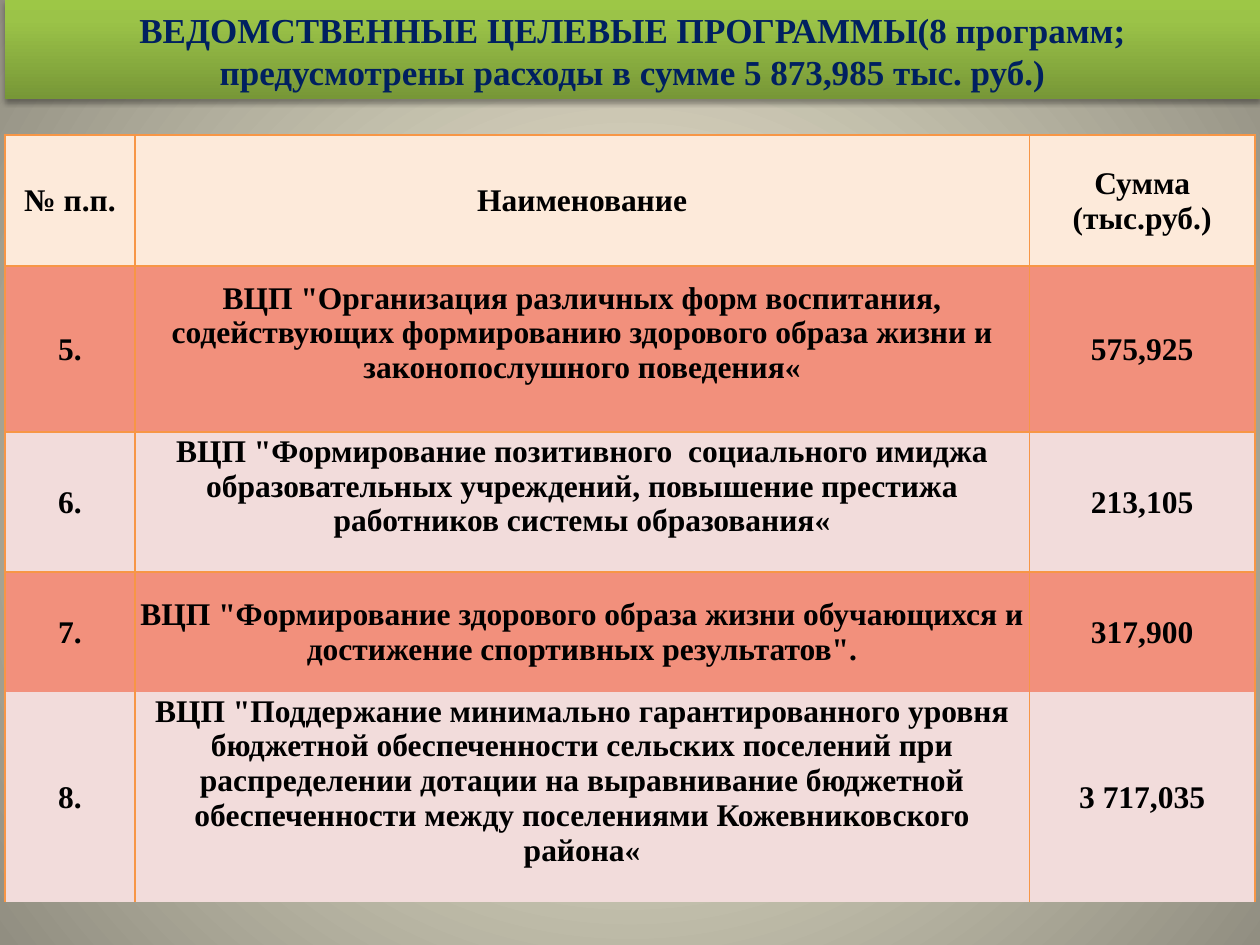
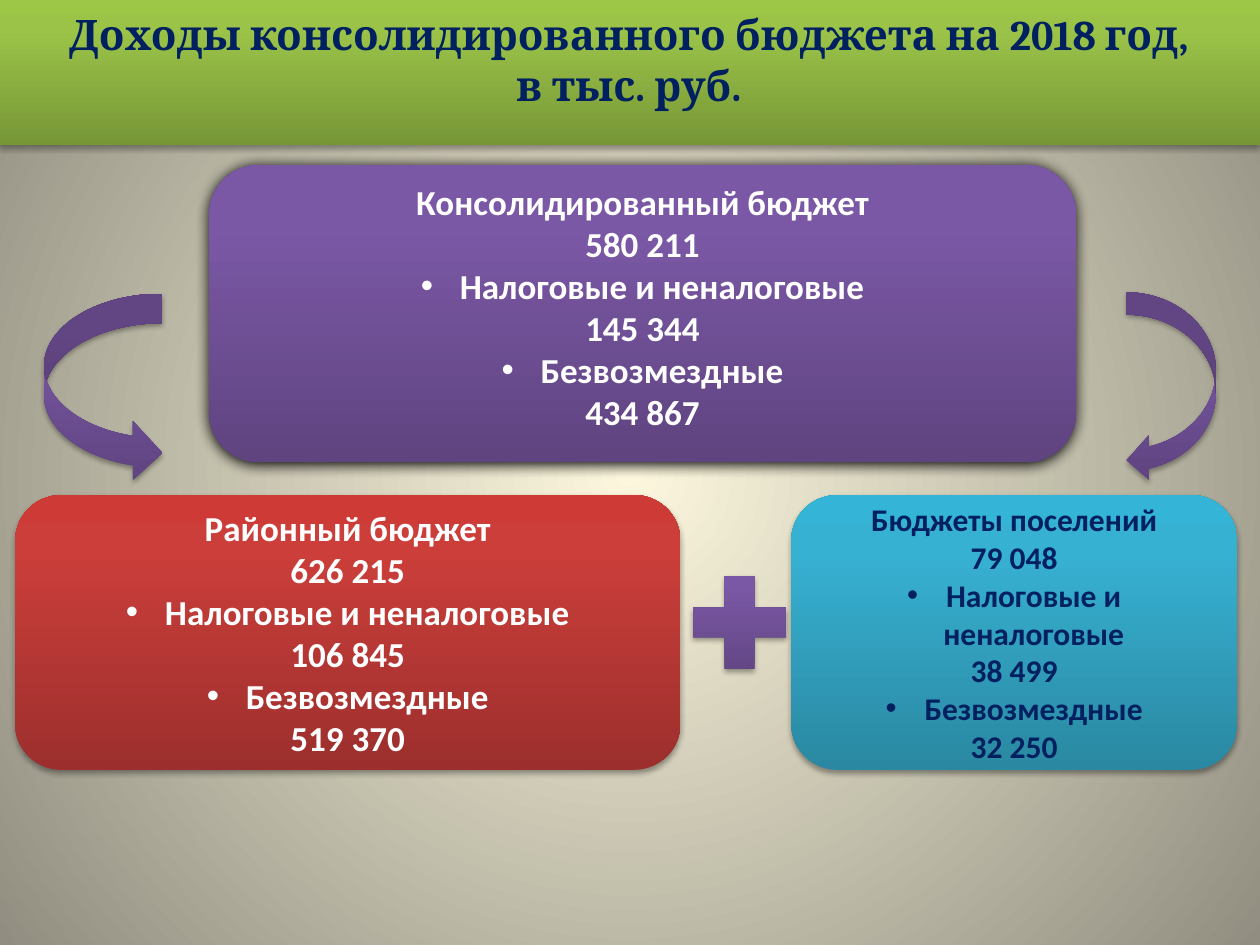
import pptx
import pptx.util
import pptx.oxml
import pptx.oxml.ns
from pptx.dml.color import RGBColor
from pptx.enum.shapes import MSO_SHAPE
from pptx.enum.text import MSO_ANCHOR, PP_ALIGN

Pt = pptx.util.Pt
Inches = pptx.util.Inches
qn = pptx.oxml.ns.qn

WIDE, HIGH = Inches(10), Inches(7.5)

# Shared colours
NAVY = RGBColor(0x00, 0x20, 0x60)
WHITE = RGBColor(0xFF, 0xFF, 0xFF)
BLACK = RGBColor(0x00, 0x00, 0x00)
ORANGE = RGBColor(0xF7, 0x96, 0x46)
CREAM = RGBColor(0xFD, 0xEA, 0xDA)
CORAL = RGBColor(0xF2, 0x90, 0x7C)
ROSE = RGBColor(0xF2, 0xDC, 0xDB)


def ramp(*tones):
    """Pair three colours with the gradient stops used by all shapes."""
    return list(zip((0, 80, 100), map(RGBColor.from_string, tones)))


GREEN = ramp("779737", "9BC348", "9DC746")
PURPLE = ramp("5F4480", "7B58A6", "7C57A8")
RED = ramp("9C2F2D", "CB3E3A", "CE3B37")
CYAN = ramp("2A88A2", "37B1D2", "34B4D6")
GLOW = [(0, RGBColor(0xFC, 0xF7, 0xDD)), (100, RGBColor(0x91, 0x8E, 0x81))]

UPWARD = '<a:lin ang="16200000" scaled="0"/>'
ROUND = ('<a:path path="circle"><a:fillToRect l="50000" t="50000" '
         'r="50000" b="50000"/></a:path>')

# Shadows: opacity in percent, blur and distance in points
SOFT = (35, 3.1, 1.8)
DEEP = (100, 8.5, 1)

# Programme table
COLS = (1.03, 7.1, 1.79)
ROWS = (1.04, 1.32, 1.11, 0.95, 1.67)
HEAD = ("№ п.п.", "Наименование", "Сумма (тыс.руб.)")
PLANS = (
    ("5.", 'ВЦП "Организация различных форм воспитания, содействующих '
     'формированию здорового образа жизни и законопослушного поведения«',
     "575,925"),
    ("6.", 'ВЦП "Формирование позитивного  социального имиджа образовательных '
     'учреждений, повышение престижа работников системы образования«',
     "213,105"),
    ("7.", 'ВЦП "Формирование здорового образа жизни обучающихся и '
     'достижение спортивных результатов".', "317,900"),
    ("8.", 'ВЦП "Поддержание минимально гарантированного уровня бюджетной '
     'обеспеченности сельских поселений при распределении дотации на '
     'выравнивание бюджетной обеспеченности между поселениями '
     'Кожевниковского района«', "3 717,035"),
)


def node(text):
    """Make an element of the drawing namespace from its markup."""
    space = pptx.oxml.ns.nsdecls("a")
    end = min(i for i in (text.find(" "), text.find("/>"), text.find(">"))
              if i > 0)
    return pptx.oxml.parse_xml(f"{text[:end]} {space}{text[end:]}")


def place(x, y, w, h):
    """Turn percentages of the slide into left, top, width, height."""
    return [int(side * part / 100)
            for side, part in zip((WIDE, HIGH, WIDE, HIGH), (x, y, w, h))]


def blend(fill, owner, stops, course):
    """Give a fill a gradient that follows the given course."""
    fill.gradient()
    old = owner.find(".//" + qn("a:gradFill"))
    marks = "".join(f'<a:gs pos="{pos * 1000}"><a:srgbClr val="{tone}"/></a:gs>'
                    for pos, tone in stops)
    new = node(f'<a:gradFill rotWithShape="1"><a:gsLst>{marks}</a:gsLst>'
               f'{course}</a:gradFill>')
    old.getparent().replace(old, new)


def shade(shape, alpha, blur, gap):
    """Cast a shadow straight down."""
    shape.shadow.inherit = False
    glow = shape.element.spPr.find(qn("a:effectLst"))
    glow.append(node(
        f'<a:outerShdw blurRad="{Pt(blur)}" dist="{Pt(gap)}" dir="5400000" '
        f'rotWithShape="0"><a:srgbClr val="000000">'
        f'<a:alpha val="{alpha * 1000}"/></a:srgbClr></a:outerShdw>'))


def form(slide, kind, spot, stops, cast=SOFT):
    """Add a preset shape with a gradient and a shadow."""
    shape = slide.shapes.add_shape(kind, *place(*spot))
    blend(shape.fill, shape.element.spPr, stops, UPWARD)
    shape.line.fill.background()
    shade(shape, *cast)
    return shape


def write(frame, lines, font, size, ink):
    """Write centred bold lines, one paragraph each."""
    frame.word_wrap = True
    for i, line in enumerate(lines):
        para = frame.paragraphs[0] if i == 0 else frame.add_paragraph()
        para.alignment = PP_ALIGN.CENTER
        run = para.add_run()
        run.text = line
        run.font.name, run.font.size = font, Pt(size)
        run.font.bold = True
        run.font.color.rgb = ink


def dot(para):
    """Put a hanging bullet before a paragraph."""
    props = para._p.get_or_add_pPr()
    props.set("marL", str(Inches(0.31)))
    props.set("indent", str(-Inches(0.31)))
    props.append(node('<a:buFont typeface="Arial"/>'))
    props.append(node('<a:buChar char="•"/>'))


def page(deck):
    """Add a blank slide with the glowing background."""
    slide = deck.slides.add_slide(deck.slide_layouts[6])
    blend(slide.background.fill, slide.element, GLOW, ROUND)
    return slide


def band(slide, spot, lines, font, size):
    """Add the green title band."""
    frame = form(slide, MSO_SHAPE.RECTANGLE, spot, GREEN).text_frame
    frame.vertical_anchor = MSO_ANCHOR.TOP
    frame.margin_top = Inches(0.07)
    write(frame, lines, font, size, NAVY)


def edge(cell, sides):
    """Draw the named sides of a cell in orange."""
    props = cell._tc.get_or_add_tcPr()
    for i, side in enumerate(s for s in "LRTB" if s in sides):
        props.insert(i, node(
            f'<a:ln{side} w="{Pt(1)}"><a:solidFill><a:srgbClr '
            f'val="{ORANGE}"/></a:solidFill></a:ln{side}>'))


def grid(slide):
    """Add the table of programmes."""
    data = (HEAD,) + PLANS
    frame = slide.shapes.add_table(
        len(ROWS), len(COLS), *place(0.4, 14.27, 99.2, 81.2))
    table = frame.table
    table.first_row = table.horz_banding = False
    table._tbl.tblPr.find(qn("a:tableStyleId")).text = (
        "{2D5ABB26-0587-4C30-8999-92F81FD0307C}")
    for col, wide in zip(table.columns, COLS):
        col.width = Inches(wide)
    for r, (row, high) in enumerate(zip(table.rows, ROWS)):
        row.height = Inches(high)
        for c, cell in enumerate(row.cells):
            cell.fill.solid()
            cell.fill.fore_color.rgb = (
                CREAM if r == 0 else CORAL if r % 2 else ROSE)
            cell.vertical_anchor = MSO_ANCHOR.MIDDLE
            cell.margin_left = cell.margin_right = Inches(0.01)
            cell.margin_top = Inches(0.01)
            # Long names sit a little above the middle
            lift = c == 1 and r in (1, 2, 4)
            cell.margin_bottom = Inches(0.26 if lift else 0)
            write(cell.text_frame, [data[r][c]], "Times New Roman", 18, BLACK)
            edge(cell, ("LR", "L", "R")[c] + ("T" if r < 3 else "")
                 + ("B" if r < 2 else ""))


def card(slide, spot, stops, title, sums, size=20, ink=WHITE,
         cast=SOFT, foot=0.05):
    """Add a budget card: title, total, and the two kinds of income."""
    frame = form(slide, MSO_SHAPE.ROUNDED_RECTANGLE, spot, stops,
                 cast).text_frame
    frame.vertical_anchor = MSO_ANCHOR.MIDDLE
    frame.margin_bottom = Inches(foot)
    total, taxes, grants = sums
    write(frame, (title, total, "Налоговые и неналоговые", taxes,
                  "Безвозмездные", grants), "Calibri", size, ink)
    for para in frame.paragraphs[2:5:2]:
        dot(para)


def plans(deck):
    slide = page(deck)
    grid(slide)
    band(slide, (0.4, 0, 99.6, 10.5),
         ["ВЕДОМСТВЕННЫЕ ЦЕЛЕВЫЕ ПРОГРАММЫ(8 программ; "
          "предусмотрены расходы в сумме 5 873,985 тыс. руб.)"],
         "Times New Roman", 20)


def income(deck):
    slide = page(deck)
    # Whole budget above, its two parts below
    card(slide, (16.6, 17.47, 68.8, 31.47), PURPLE, "Консолидированный бюджет",
         ("580 211", "145 344", "434 867"), cast=DEEP, foot=0.17)
    top, high = 52.4, 29.07
    card(slide, (1.2, top, 52.8, high), RED, "Районный бюджет",
         ("626 215", "106 845", "519 370"))
    card(slide, (62.8, top, 35.4, high), CYAN, "Бюджеты поселений",
         ("79 048", "38 499", "32 250"), size=18, ink=NAVY)
    band(slide, (-0.2, 0, 100.2, 15.33),
         ["Доходы консолидированного бюджета на 2018 год,", "в тыс. руб."],
         "Cambria", 24)
    # Signs that link the cards
    for kind, spot in (
            (MSO_SHAPE.MATH_PLUS, (53.7, 59.2, 10, 13.33)),
            (MSO_SHAPE.CURVED_RIGHT_ARROW, (3.5, 31.07, 9.4, 20)),
            (MSO_SHAPE.CURVED_LEFT_ARROW, (89.4, 30.93, 7.1, 20.13))):
        form(slide, kind, spot, PURPLE)


def main():
    deck = pptx.Presentation()
    deck.slide_width, deck.slide_height = WIDE, HIGH
    plans(deck)
    income(deck)
    deck.save("out.pptx")


if __name__ == "__main__":
    main()
